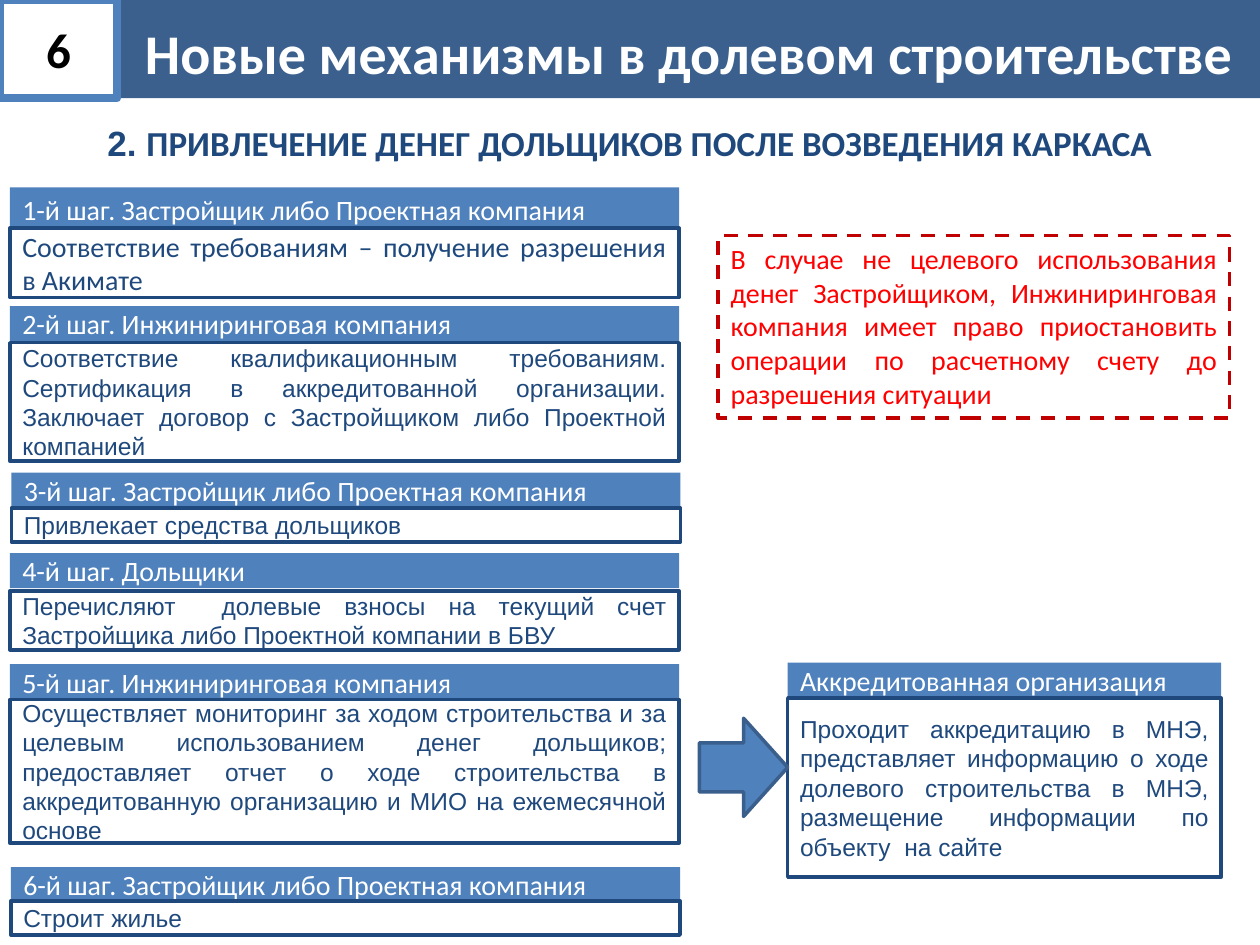
"""Build a slide on the steps of attracting shared-construction funds after the frame is erected."""
from lxml.etree import SubElement
from pptx import Presentation
from pptx.dml.color import RGBColor
from pptx.enum.dml import MSO_LINE
from pptx.enum.shapes import MSO_SHAPE as Shape
from pptx.enum.text import MSO_ANCHOR as Anchor, MSO_AUTO_SIZE as AutoSize, PP_ALIGN as Align
from pptx.oxml.ns import qn
from pptx.util import Cm, Pt

COLORS = {
    "navy": "1F497D",
    "blue": "4F81BD",
    "arrow_edge": "3A5F8C",
    "white": "FFFFFF",
    "black": "000000",
    "red": "FF0000",
    "dark_red": "C00000",
}
STEP_LEFT, STEP_WIDTH = 0.2, 13.49
HEADER_HEIGHT = 0.71
CALIBRI_16 = {"font": "Calibri", "size": 16}
ARIAL_14 = {"font": "Arial", "size": 14}

STEPS = [
    (0.2, 3.78, 0.89, 4.6, 1.4, "1-й шаг. Застройщик либо Проектная компания",
     "Соответствие требованиям – получение разрешения в Акимате", CALIBRI_16),
    (0.2, 6.17, HEADER_HEIGHT, 6.91, 2.39, "2-й шаг. Инжиниринговая компания",
     "Соответствие квалификационным требованиям. Сертификация в аккредитованной организации. "
     "Заключает договор с Застройщиком либо Проектной компанией", ARIAL_14),
    (0.23, 9.53, HEADER_HEIGHT, 10.24, 0.69, "3-й шаг. Застройщик либо Проектная компания",
     "Привлекает средства дольщиков", ARIAL_14),
    (0.2, 11.15, HEADER_HEIGHT, 11.91, 1.19, "4-й шаг. Дольщики",
     "Перечисляют  долевые взносы на текущий счет Застройщика либо Проектной компании в БВУ",
     ARIAL_14),
    (0.2, 13.39, HEADER_HEIGHT, 14.1, 2.9, "5-й шаг. Инжиниринговая компания",
     "Осуществляет мониторинг за ходом строительства и за целевым использованием денег "
     "дольщиков; предоставляет отчет о ходе строительства в аккредитованную организацию "
     "и МИО на ежемесячной основе", ARIAL_14),
    (0.22, 17.48, HEADER_HEIGHT, 18.16, 0.69, "6-й шаг. Застройщик либо Проектная компания",
     "Строит жилье", ARIAL_14),
]


def rgb(name):
    """Return the named palette colour."""
    return RGBColor.from_string(COLORS[name])


def write(paragraph, text, *, font, size, color, bold=False, align=Align.LEFT):
    """Add a formatted run to a paragraph."""
    paragraph.alignment = align
    run = paragraph.add_run()
    run.text = text
    run.font.name = font
    run.font.size = Pt(size)
    run.font.bold = bold
    run.font.color.rgb = rgb(color)


def add_box(slide, left, top, width, height, *, fill=None, line=None, line_width=2,
            kind=Shape.RECTANGLE):
    """Add a shape, with sizes in centimetres, and return it."""
    shape = slide.shapes.add_shape(kind, Cm(left), Cm(top), Cm(width), Cm(height))
    shape.shadow.inherit = False
    if fill:
        shape.fill.solid()
        shape.fill.fore_color.rgb = rgb(fill)
    else:
        shape.fill.background()
    if line:
        shape.line.color.rgb = rgb(line)
        shape.line.width = Pt(line_width)
    else:
        shape.line.fill.background()
    shape.text_frame.word_wrap = True
    shape.text_frame.vertical_anchor = Anchor.MIDDLE
    return shape


def add_card(slide, left, width, header_top, header_height, body_top, body_height,
             heading, body, body_format):
    """Add a blue heading bar with an outlined text box below it."""
    header = add_box(slide, left, header_top, width, header_height, fill="blue")
    write(header.text_frame.paragraphs[0], heading, color="white", **CALIBRI_16)
    box = add_box(slide, left, body_top, width, body_height, fill="white", line="navy")
    write(box.text_frame.paragraphs[0], body, color="navy", align=Align.JUSTIFY, **body_format)


def add_title(slide):
    """Place and format the slide title."""
    title = slide.shapes.title
    title.left, title.top, title.width, title.height = Cm(0), Cm(2.18), Cm(25.4), Cm(1.4)
    frame = title.text_frame
    frame.word_wrap = True
    frame.auto_size = AutoSize.NONE
    frame.vertical_anchor = Anchor.MIDDLE
    style = {"size": 20, "color": "navy", "bold": True, "align": Align.CENTER}
    write(frame.paragraphs[0], "2. ", font="Arial", **style)
    write(frame.paragraphs[0], "ПРИВЛЕЧЕНИЕ ДЕНЕГ ДОЛЬЩИКОВ ПОСЛЕ ВОЗВЕДЕНИЯ КАРКАСА",
          font="Calibri", **style)


def add_banner(slide):
    """Add the translucent top banner and the slide number box."""
    banner = add_box(slide, 2.39, 0, 23.01, 1.98, fill="navy")
    color = banner.fill._xPr.find(qn("a:solidFill"))[0]
    SubElement(color, qn("a:alpha"), val="87000")
    paragraph = banner.text_frame.paragraphs[0]
    paragraph.line_spacing = 1.1
    paragraph.space_after = Pt(9)
    write(paragraph, "Новые механизмы в долевом строительстве", font="Calibri", size=32,
          color="white", bold=True, align=Align.CENTER)
    number = add_box(slide, 0, 0, 2.36, 1.98, line="blue", line_width=5)
    write(number.text_frame.paragraphs[0], "6", font="Calibri", size=28, color="black",
          bold=True, align=Align.CENTER)


def add_warning(slide):
    """Add the dashed red warning box."""
    warning = add_box(slide, 14.48, 4.75, 10.31, 3.68, line="dark_red")
    warning.line.dash_style = MSO_LINE.DASH
    warning.text_frame.vertical_anchor = Anchor.TOP
    warning.text_frame.auto_size = AutoSize.SHAPE_TO_FIT_TEXT
    write(warning.text_frame.paragraphs[0],
          "В случае не целевого использования денег Застройщиком, Инжиниринговая компания "
          "имеет право приостановить операции по расчетному счету до разрешения ситуации",
          color="red", align=Align.JUSTIFY, **CALIBRI_16)


def main():
    """Build and save the presentation."""
    presentation = Presentation()
    presentation.slide_width, presentation.slide_height = Cm(25.4), Cm(19.05)
    slide = presentation.slides.add_slide(presentation.slide_layouts[5])
    add_title(slide)
    for left, *card in STEPS:
        add_card(slide, left, STEP_WIDTH, *card)
    add_card(slide, 15.88, 8.74, 13.36, HEADER_HEIGHT, 14.07, 3.61,
             "Аккредитованная организация",
             "Проходит аккредитацию в МНЭ, представляет информацию о ходе долевого "
             "строительства в МНЭ, размещение информации по объекту  на сайте", ARIAL_14)
    add_box(slide, 14.1, 14.48, 1.78, 1.98, fill="blue", line="arrow_edge",
            kind=Shape.RIGHT_ARROW)
    add_banner(slide)
    add_warning(slide)
    presentation.save("out.pptx")


if __name__ == "__main__":
    main()
